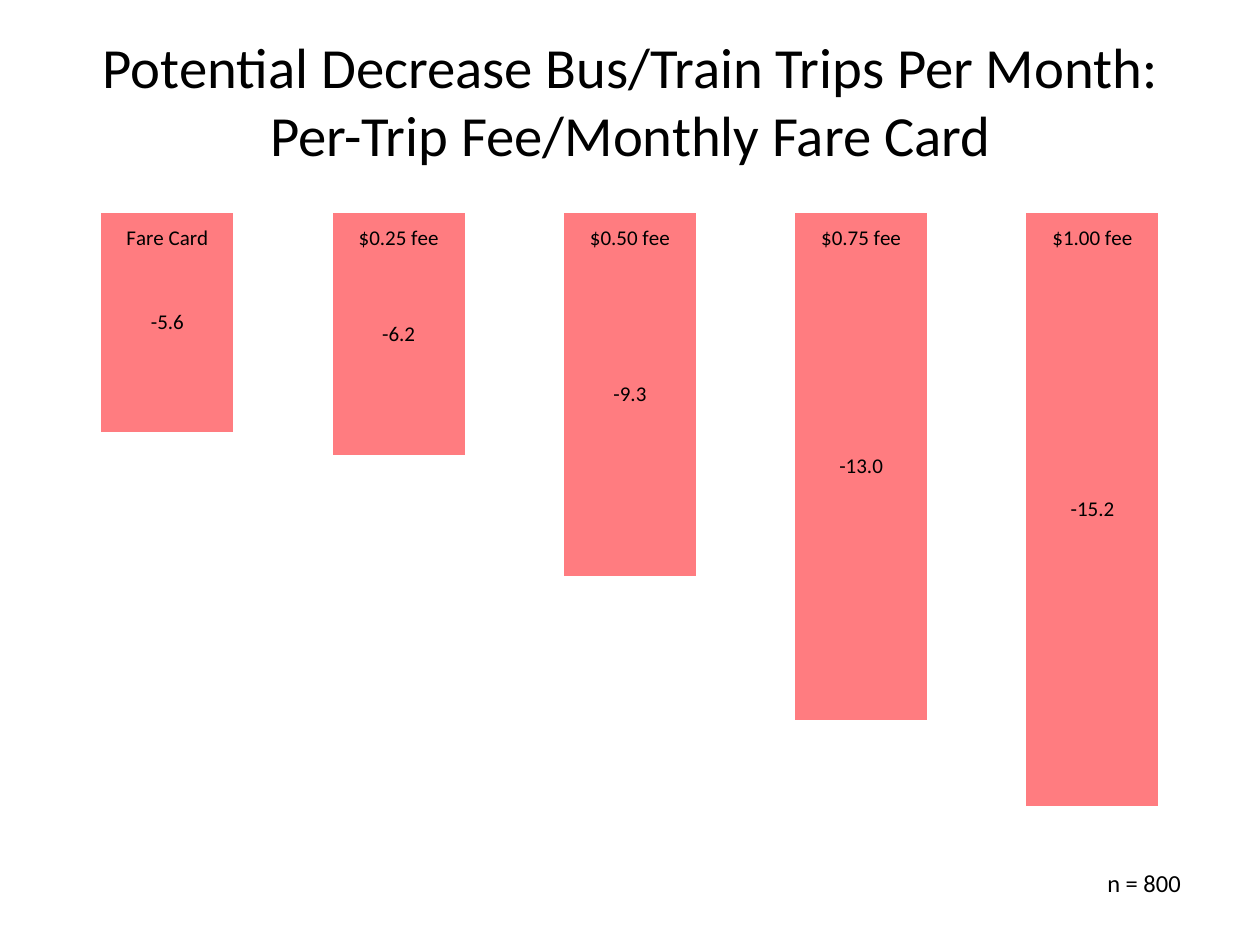
from dataclasses import dataclass

from lxml import etree
from pptx import Presentation
from pptx import util as u
from pptx.chart.data import CategoryChartData
from pptx.dml.color import RGBColor
from pptx.enum import chart as charts
from pptx.enum import text
from pptx.oxml.ns import qn

BLACK = RGBColor(0x00, 0x00, 0x00)
CORAL = RGBColor(0xFF, 0x7C, 0x80)
FONT = "Calibri"


@dataclass
class Box:
    left: float
    top: float
    width: float
    height: float

    def lengths(self) -> tuple:
        return tuple(u.Cm(n) for n in (self.left, self.top, self.width, self.height))


@dataclass
class Bar:
    label: str
    change: float


BARS = [
    Bar("Fare Card", -5.6),
    Bar("$0.25 fee", -6.2),
    Bar("$0.50 fee", -9.3),
    Bar("$0.75 fee", -13.0),
    Bar("$1.00 fee", -15.2),
]
TITLE_BOX = Box(0.43, 0.43, 24.56, 3.18)
SAMPLE_BOX = Box(21.16, 16.94, 3.81, 1.7)
CHART_BOX = Box(0.66, 3.18, 24.08, 15.09)
PLOT_AREA = {"x": 0.016, "y": 0.022, "w": 0.968, "h": 0.938}


def style_font(font, size: float) -> None:
    font.size = u.Pt(size)
    font.name = FONT
    font.color.rgb = BLACK


def write_text(shape, words: str, *, size: float) -> None:
    frame = shape.text_frame
    frame.word_wrap = True
    frame.auto_size = text.MSO_AUTO_SIZE.NONE
    frame.vertical_anchor = text.MSO_ANCHOR.MIDDLE
    para = frame.paragraphs[0]
    para.text = words
    para.alignment = text.PP_ALIGN.CENTER
    for span in para.runs:
        style_font(span.font, size)


def place_plot(chart, fractions: dict[str, float]) -> None:
    plot_area = chart._chartSpace.find(".//" + qn("c:plotArea"))
    for old in plot_area.findall(qn("c:layout")):
        plot_area.remove(old)
    layout = etree.Element(qn("c:layout"))
    manual = etree.SubElement(layout, qn("c:manualLayout"))
    settings = {"layoutTarget": "inner", "xMode": "edge", "yMode": "edge", **fractions}
    for name, setting in settings.items():
        etree.SubElement(manual, qn(f"c:{name}")).set("val", str(setting))
    plot_area.insert(0, layout)


def add_trip_chart(page, bars: list[Bar], box: Box) -> None:
    figures = CategoryChartData(number_format="0.0")
    figures.categories = [bar.label for bar in bars]
    figures.add_series("Series 1", [bar.change for bar in bars])
    chart = page.shapes.add_chart(
        charts.XL_CHART_TYPE.COLUMN_CLUSTERED, *box.lengths(), figures
    ).chart
    chart.has_legend = False
    chart.has_title = False
    style_font(chart.font, 10)
    place_plot(chart, PLOT_AREA)

    category_axis = chart.category_axis
    category_axis.format.line.fill.background()
    category_axis.has_major_gridlines = False
    style_font(category_axis.tick_labels.font, 12)

    value_axis = chart.value_axis
    value_axis.minimum_scale = -17
    value_axis.maximum_scale = 1
    value_axis.has_major_gridlines = False
    value_axis.visible = False

    plot = chart.plots[0]
    plot.gap_width = 75
    plot.vary_by_categories = False
    series = plot.series[0]
    series.invert_if_negative = False
    series.format.fill.solid()
    series.format.fill.fore_color.rgb = CORAL
    labels = series.data_labels
    labels.show_value = True
    labels.number_format = "0.0"
    labels.number_format_is_linked = False
    labels.position = charts.XL_LABEL_POSITION.CENTER
    style_font(labels.font, 12)


def main() -> None:
    deck = Presentation()
    deck.slide_width = u.Cm(25.4)
    deck.slide_height = u.Cm(19.05)
    page = deck.slides.add_slide(deck.slide_layouts[5])

    title = page.shapes.title
    title.left, title.top, title.width, title.height = TITLE_BOX.lengths()
    write_text(
        title,
        "Potential Decrease Bus/Train Trips Per Month:\vPer-Trip Fee/Monthly Fare Card",
        size=32.4,
    )
    write_text(page.shapes.add_textbox(*SAMPLE_BOX.lengths()), "n = 800", size=14)
    add_trip_chart(page, BARS, CHART_BOX)
    deck.save("out.pptx")


if __name__ == "__main__":
    main()
